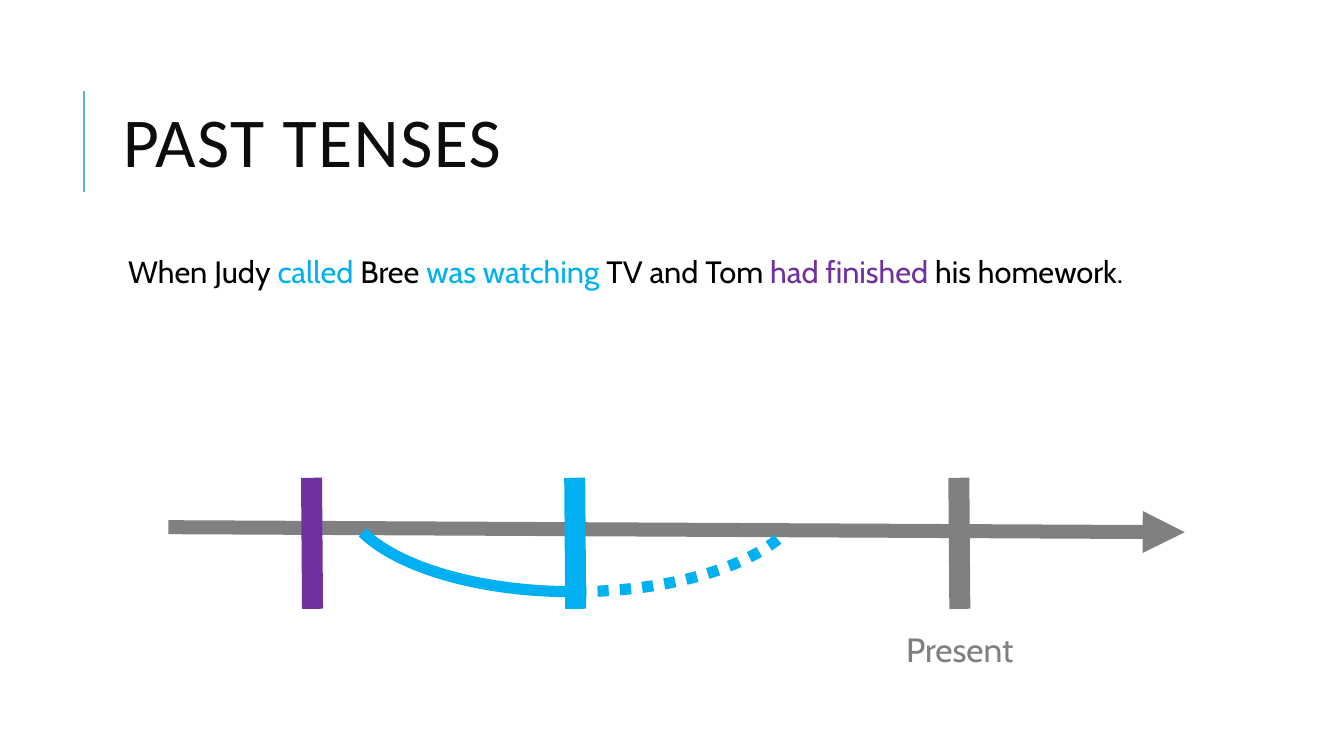
from pptx import Presentation
from pptx.dml.color import RGBColor
from pptx.enum.dml import MSO_LINE
from pptx.enum.shapes import MSO_CONNECTOR, MSO_SHAPE
from pptx.enum.text import MSO_ANCHOR, PP_ALIGN
from pptx.oxml.ns import qn
from pptx.util import Inches, Pt
from lxml import etree

STRAIGHT = MSO_CONNECTOR.STRAIGHT
ARC = MSO_SHAPE.ARC
DOTTED = MSO_LINE.ROUND_DOT  # written as sysDot
TOP, MIDDLE = MSO_ANCHOR.TOP, MSO_ANCHOR.MIDDLE
LEFT, CENTER = PP_ALIGN.LEFT, PP_ALIGN.CENTER

COLORS = {
    "title": "0D0D0D",
    "text": "000000",
    "accent": "58B6C0",
    "axis": "808080",
    "past": "00B0F0",
    "perfect": "7030A0",
}
TICK_TOP, TICK_BOTTOM = 4.74, 6.04


class SlideBuilder:
    def __init__(self, prs, font="Cabin"):
        self.slide = prs.slides.add_slide(prs.slide_layouts[6])
        self.font = font

    def color(self, name):
        return RGBColor.from_string(COLORS[name])

    def text(self, box, runs, size, font=None, anchor=TOP, align=LEFT,
             left_inset=0.1, top_inset=0.05, line_spacing=1.0, tracking=0):
        """Add a one-paragraph text box; runs are (text, colour name) pairs."""
        tb = self.slide.shapes.add_textbox(*map(Inches, box))
        tf = tb.text_frame
        tf.word_wrap = True
        tf.vertical_anchor = anchor
        tf.margin_left, tf.margin_top = Inches(left_inset), Inches(top_inset)
        p = tf.paragraphs[0]
        p.alignment = align
        p.line_spacing = line_spacing
        for words, color in runs:
            r = p.add_run()
            r.text = words
            r.font.name = font or self.font
            r.font.size = Pt(size)
            r.font.color.rgb = self.color(color)
            if tracking:
                r.font._element.set("spc", str(tracking * 100))

    def line(self, start, end, color, width, arrow=False):
        c = self.slide.shapes.add_connector(STRAIGHT, *map(Inches, start + end))
        c.line.color.rgb = self.color(color)
        c.line.width = Pt(width)
        if arrow:
            ln = c.line._get_or_add_ln()
            etree.SubElement(ln, qn("a:tailEnd"), type="triangle")
        etree.SubElement(c._element.spPr, qn("a:effectLst"))

    def tick(self, x, color):
        self.line((x, TICK_TOP), (x + 0.01, TICK_BOTTOM), color, 15)

    def arc(self, left, color, rotation=0, flip=False, dash=None):
        sp = self.slide.shapes.add_shape(
            ARC, Inches(left), Inches(3.89), Inches(4.57), Inches(1.98))
        sp.shadow.inherit = False
        sp.adjustments[0], sp.adjustments[1] = 162, 209.484
        sp.fill.background()
        sp.line.color.rgb = self.color(color)
        sp.line.width = Pt(8)
        if dash:
            sp.line.dash_style = dash
        sp.rotation = rotation
        if flip:
            sp._element.spPr.find(qn("a:xfrm")).set("flipV", "1")


def main():
    prs = Presentation()
    prs.slide_width, prs.slide_height = Inches(13.33), Inches(7.5)
    s = SlideBuilder(prs)

    s.line((0.83, 1.9), (0.83, 0.9), "accent", 1.5)
    s.text((1.12, 0.64, 10.63, 1.64), [("PAST TENSES", "title")], 50,
           font="Calibri", anchor=MIDDLE, line_spacing=0.8, tracking=1)
    s.text((1.12, 2.5, 10.63, 4.4), [
        ("When Judy ", "text"),
        ("called", "past"),
        (" Bree ", "text"),
        ("was watching ", "past"),
        ("TV and Tom ", "text"),
        ("had finished ", "perfect"),
        ("his homework.", "text"),
    ], 22, left_inset=0.15, line_spacing=0.9)

    s.line((1.67, 5.23), (11.75, 5.28), "axis", 10, arrow=True)
    s.tick(9.51, "axis")
    s.tick(5.7, "past")
    s.text((8.67, 6.19, 1.7, 0.5), [("Present", "axis")], 24, align=CENTER)
    s.arc(3.4, "past", rotation=180)
    s.arc(3.42, "past", flip=True, dash=DOTTED)
    s.tick(3.09, "perfect")

    prs.save("out.pptx")


if __name__ == "__main__":
    main()
